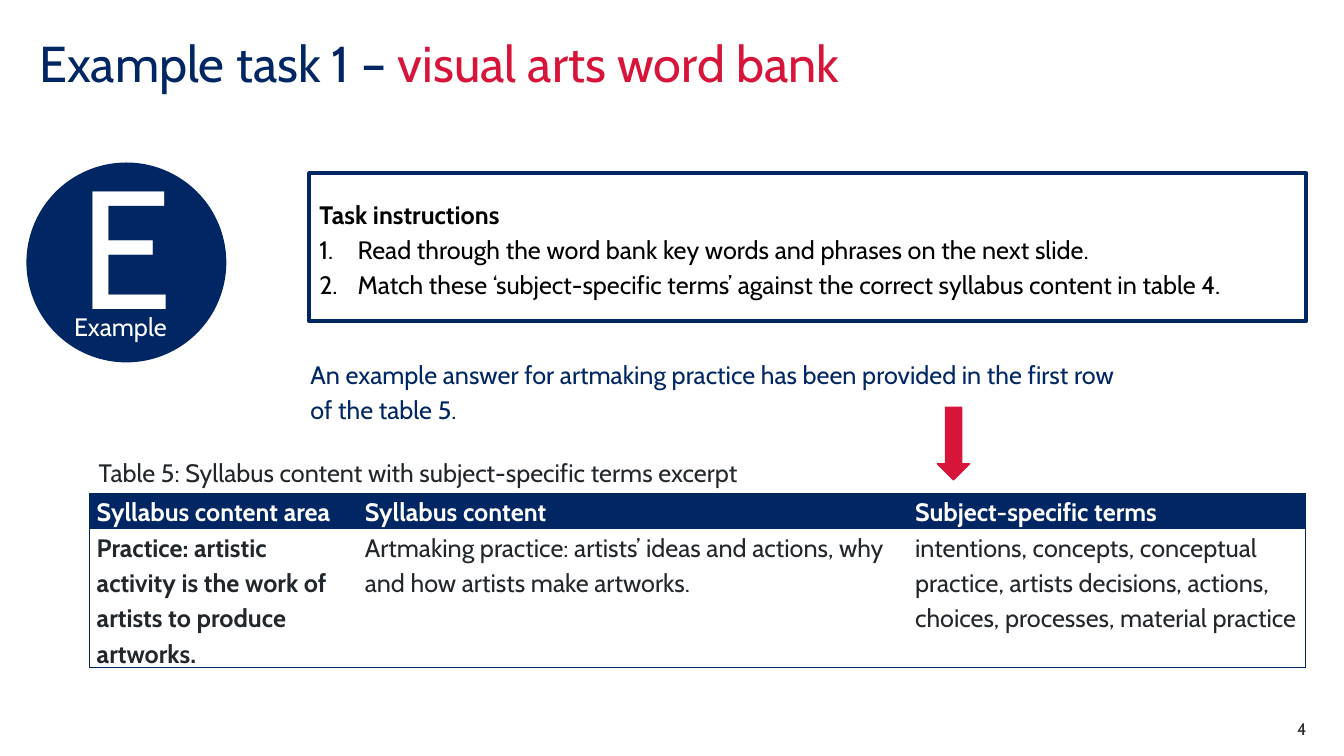
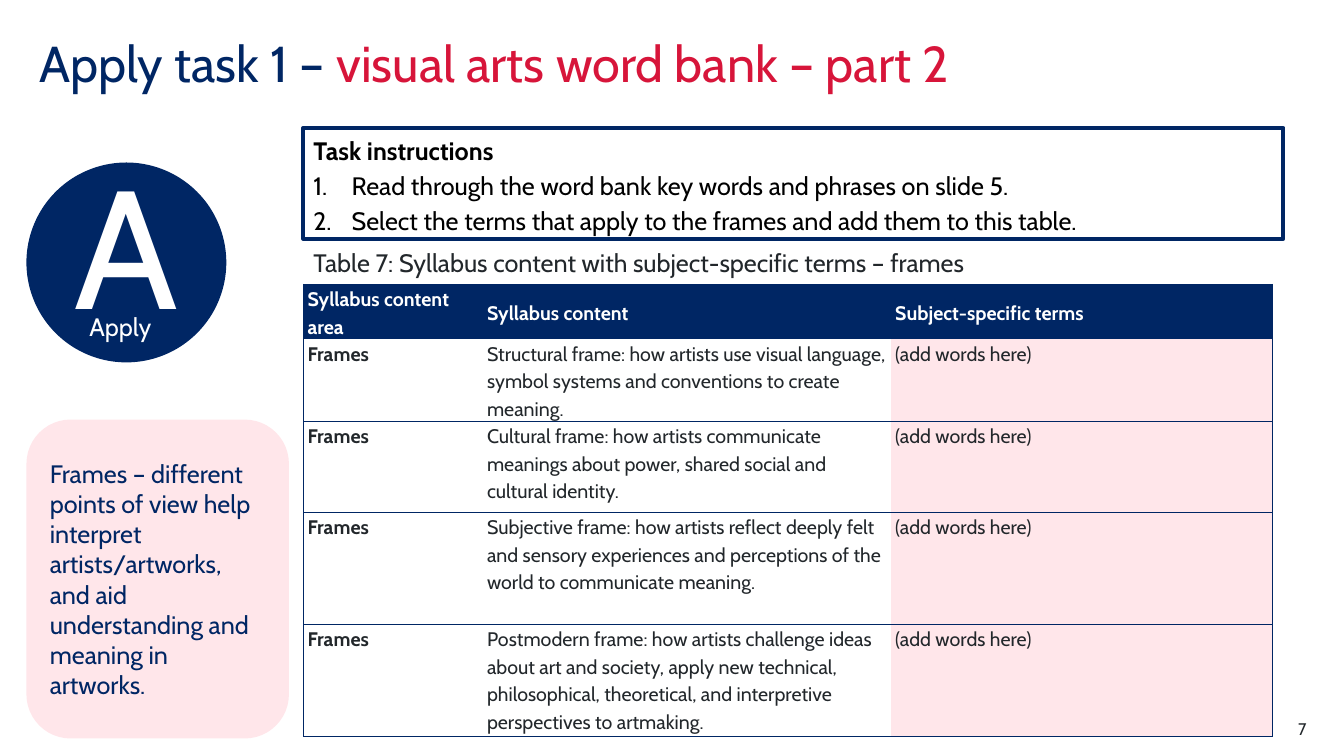
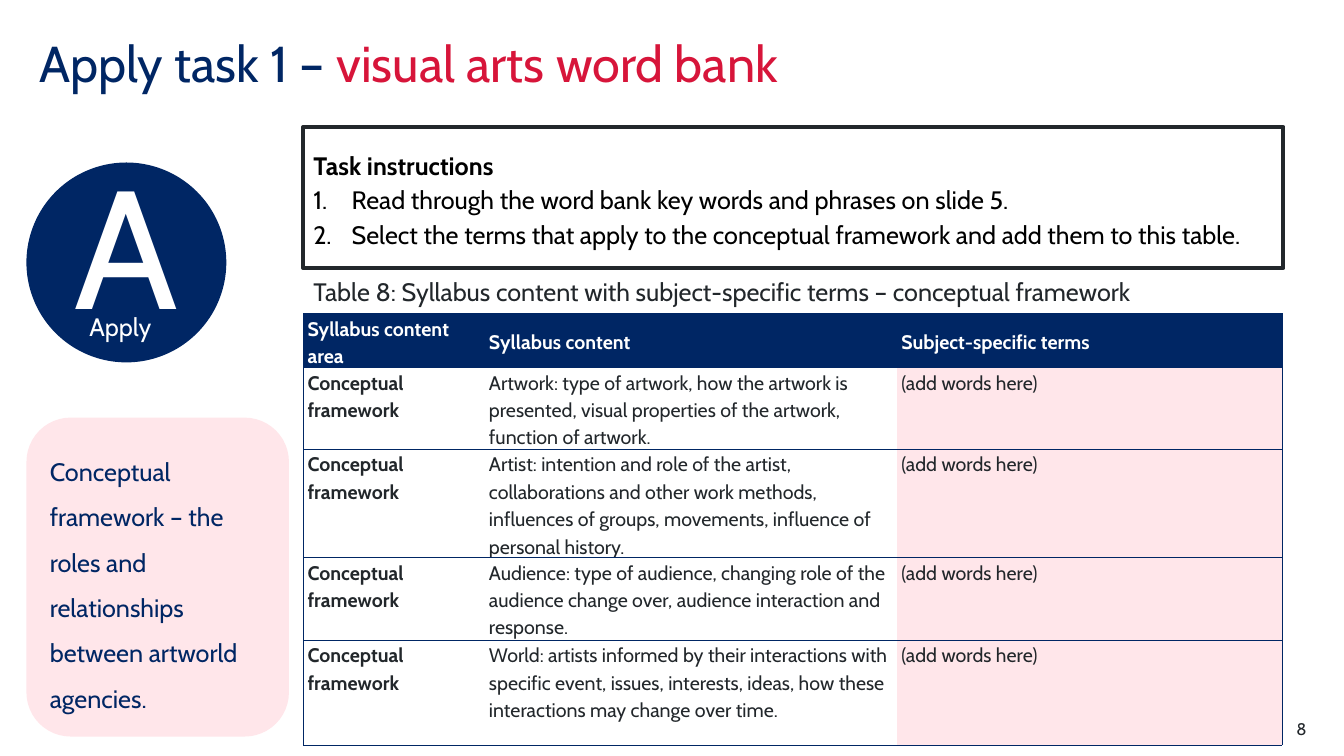
from dataclasses import dataclass
from typing import Optional

from lxml import etree
from pptx import Presentation
from pptx.dml.color import RGBColor
from pptx.enum.shapes import MSO_SHAPE as Shape
from pptx.enum.text import MSO_ANCHOR as Anchor, PP_ALIGN as Align
from pptx.oxml.ns import qn
from pptx.util import Pt


@dataclass(frozen=True)
class Theme:
    font: str = "Cabin"
    navy: str = "002664"
    red: str = "D7153A"
    pink: str = "FFE6EA"
    ink: str = "22272B"
    black: str = "000000"
    white: str = "FFFFFF"
    title: float = 36
    body: float = 18
    small: float = 14
    number: float = 12
    letter: float = 120
    leading: float = 1.15
    no_style: str = "{2D5ABB26-0587-4C30-8999-92F81FD0307C}"


T = Theme()


@dataclass(frozen=True)
class Box:
    x: float
    y: float
    w: float
    h: float

    def pts(self) -> tuple:
        return Pt(self.x), Pt(self.y), Pt(self.w), Pt(self.h)


@dataclass(frozen=True)
class Note:
    text: str
    y: float
    leading: float = 1.0


@dataclass(frozen=True)
class TermTable:
    caption: str
    caption_box: Box
    x: float
    y: float
    cols: tuple
    heights: tuple
    rows: tuple
    size: float = T.small
    margin: float = 3
    answer_fill: str = T.pink


@dataclass(frozen=True)
class Task:
    kind: str
    topic: str
    steps: tuple
    box: Box
    table: TermTable
    number: str
    outline: str = T.navy
    note: Optional[Note] = None


HEADER = ("Syllabus content area", "Syllabus content", "Subject-specific terms")
BLANK_ANSWER = "(add words here)"


def blank_rows(area: str, *contents: str) -> tuple:
    return tuple((area, content, BLANK_ANSWER) for content in contents)


TASKS = (
    Task(
        "Example", "visual arts word bank",
        ("Read through the word bank key words and phrases on the next slide.",
         "Match these ‘subject-specific terms’ against the correct syllabus content in table 4."),
        Box(221, 123.8, 712, 105.8),
        TermTable(
            "Table 5: Syllabus content with subject-specific terms excerpt",
            Box(63.4, 323.3, 549, 28.8), 64.1, 352.1,
            (191.5, 393.1, 283.7), (25.2, 99),
            (("Practice: artistic activity is the work of artists to produce artworks.",
              "Artmaking practice: artists’ ideas and actions, why and how artists make artworks.",
              "intentions, concepts, conceptual practice, artists decisions, actions, choices, "
              "processes, material practice"),),
            size=T.body, margin=5, answer_fill=T.white),
        "4"),
    Task(
        "Apply", "visual arts word bank – part 2",
        ("Read through the word bank key words and phrases on slide 5.",
         "Select the terms that apply to the frames and add them to this table."),
        Box(216.7, 91.4, 700, 79.2),
        TermTable(
            "Table 7: Syllabus content with subject-specific terms – frames",
            Box(216.7, 172.8, 700, 28.8), 216.7, 203,
            (128.2, 291.6, 272.2), (38.9, 59, 65, 80, 80),
            blank_rows(
                "Frames",
                "Structural frame: how artists use visual language, symbol systems and "
                "conventions to create meaning.",
                "Cultural frame: how artists communicate meanings about power, shared social "
                "and cultural identity.",
                "Subjective frame: how artists reflect deeply felt and sensory experiences and "
                "perceptions of the world to communicate meaning.",
                "Postmodern frame: how artists challenge ideas about art and society, apply new "
                "technical, philosophical, theoretical, and interpretive perspectives to "
                "artmaking.")),
        "7",
        note=Note("Frames – different points of view help interpret artists/artworks, and aid "
                  "understanding and meaning in artworks.", 300.2)),
    Task(
        "Apply", "visual arts word bank",
        ("Read through the word bank key words and phrases on slide 5.",
         "Select the terms that apply to the conceptual framework and add them to this table."),
        Box(216.7, 90.7, 700, 100.8),
        TermTable(
            "Table 8: Syllabus content with subject-specific terms – conceptual framework",
            Box(216.7, 193.7, 700, 28.8), 216.7, 223.9,
            (129.6, 294.5, 275), (38.5, 58.5, 77, 59, 75),
            blank_rows(
                "Conceptual framework",
                "Artwork: type of artwork, how the artwork is presented, visual properties of "
                "the artwork, function of artwork.",
                "Artist: intention and role of the artist, collaborations and other work "
                "methods, influences of groups, movements, influence of personal history.",
                "Audience: type of audience, changing role of the audience change over, "
                "audience interaction and response.",
                "World: artists informed by their interactions with specific event, issues, "
                "interests, ideas, how these interactions may change over time.")),
        "8", outline=T.ink,
        note=Note("Conceptual framework – the roles and relationships between artworld "
                  "agencies.", 298.8, 1.5)),
)


def rgb(color: str) -> RGBColor:
    return RGBColor.from_string(color)


def write(p, text: str, *, size: float = T.body, color: str = T.ink, bold: bool = False,
          align=Align.LEFT, leading: float = 1.0) -> None:
    p.alignment = align
    p.line_spacing = leading
    r = p.add_run()
    r.text = text
    r.font.name = T.font
    r.font.size = Pt(size)
    r.font.bold = bold
    r.font.color.rgb = rgb(color)


def add_text(shapes, box: Box, *, inset: bool = True, anchor=Anchor.TOP):
    tf = shapes.add_textbox(*box.pts()).text_frame
    tf.word_wrap = True
    tf.vertical_anchor = anchor
    if not inset:
        tf.margin_left = tf.margin_right = tf.margin_top = tf.margin_bottom = 0
    return tf.paragraphs[0]


def add_shape(shapes, kind, box: Box, fill: str, line: str, width: float = 1):
    sp = shapes.add_shape(kind, *box.pts())
    sp.shadow.inherit = False
    sp.fill.solid()
    sp.fill.fore_color.rgb = rgb(fill)
    sp.line.color.rgb = rgb(line)
    sp.line.width = Pt(width)
    sp.text_frame.word_wrap = True
    sp.text_frame.vertical_anchor = Anchor.MIDDLE
    return sp


def number_item(p, indent: float) -> None:
    ppr = p._p.get_or_add_pPr()
    ppr.set("marL", str(Pt(indent)))
    ppr.set("indent", str(-Pt(indent)))
    etree.SubElement(ppr, qn("a:buAutoNum"), type="arabicPeriod")


def add_badge(s, kind: str) -> None:
    shapes = s.shapes.add_group_shape().shapes
    sp = add_shape(shapes, Shape.OVAL, Box(19.4, 116.6, 141.8, 141.8), T.navy, T.navy)
    sp.text_frame.margin_bottom = Pt(32.8)
    write(sp.text_frame.paragraphs[0], kind[0], size=T.letter, color=T.white,
          align=Align.CENTER)
    write(add_text(shapes, Box(42, 222.5, 88, 34.5), inset=False), kind, color=T.white,
          align=Align.CENTER)


def add_instructions(s, task: Task) -> None:
    tf = add_shape(s.shapes, Shape.RECTANGLE, task.box, T.white, task.outline, 3).text_frame
    write(tf.paragraphs[0], "Task instructions", color=T.black, bold=True, leading=T.leading)
    for step in task.steps:
        p = tf.add_paragraph()
        number_item(p, 27.4)
        write(p, step, color=T.black, leading=T.leading)


def set_borders(cell, sides: str) -> None:
    tcpr = cell._tc.get_or_add_tcPr()
    for i, side in enumerate(sides):
        ln = etree.Element(qn(f"a:ln{side}"), w=str(Pt(0.5)))
        fill = etree.SubElement(ln, qn("a:solidFill"))
        etree.SubElement(fill, qn("a:srgbClr"), val=T.navy)
        tcpr.insert(i, ln)


def add_term_table(s, t: TermTable) -> None:
    write(add_text(s.shapes, t.caption_box, anchor=Anchor.MIDDLE), t.caption)
    rows = (HEADER, *t.rows)
    box = Box(t.x, t.y, sum(t.cols), sum(t.heights))
    frame = s.shapes.add_table(len(rows), len(t.cols), *box.pts())
    next(frame.element.iter(qn("a:tableStyleId"))).text = T.no_style
    table = frame.table
    table.horz_banding = False
    for col, width in zip(table.columns, t.cols):
        col.width = Pt(width)
    for row, height in zip(table.rows, t.heights):
        row.height = Pt(height)
    body_fills = (T.white, T.white, t.answer_fill)
    for i, texts in enumerate(rows):
        head = i == 0
        for j, text in enumerate(texts):
            cell = table.cell(i, j)
            cell.margin_left = cell.margin_right = Pt(t.margin)
            cell.margin_top = cell.margin_bottom = 0
            cell.vertical_anchor = Anchor.MIDDLE if head else Anchor.TOP
            cell.fill.solid()
            cell.fill.fore_color.rgb = rgb(T.navy if head else body_fills[j])
            set_borders(cell, ("LTB", "TB", "RTB")[j])
            write(cell.text_frame.paragraphs[0], text, size=t.size,
                  color=T.white if head else T.ink, bold=head or j == 0, leading=T.leading)


def add_task(prs, task: Task):
    s = prs.slides.add_slide(prs.slide_layouts[6])
    p = add_text(s.shapes, Box(28, 28, 794, 79), inset=False)
    write(p, f"{task.kind} task 1 – ", size=T.title, color=T.navy, leading=0.9)
    write(p, task.topic, size=T.title, color=T.red, leading=0.9)
    add_badge(s, task.kind)
    if task.note:
        sp = add_shape(s.shapes, Shape.ROUNDED_RECTANGLE, Box(19.4, task.note.y, 186.5, 226.8),
                       T.pink, T.pink)
        write(sp.text_frame.paragraphs[0], task.note.text, color=T.navy,
              leading=task.note.leading)
    add_instructions(s, task)
    add_term_table(s, task.table)
    write(add_text(s.shapes, Box(876.2, 513.4, 57, 14.4), inset=False), task.number,
          size=T.number, align=Align.RIGHT)
    return s


def add_example_pointer(s) -> None:
    write(add_text(s.shapes, Box(214.6, 249.8, 591.8, 55.4)),
          "An example answer for artmaking practice has been provided in the first row of "
          "the table 5.", color=T.navy, leading=T.leading)
    add_shape(s.shapes, Shape.DOWN_ARROW, Box(669.6, 291, 23, 51.8), T.red, T.red)


def main() -> None:
    prs = Presentation()
    prs.slide_width, prs.slide_height = Pt(960), Pt(540)
    slides = [add_task(prs, task) for task in TASKS]
    add_example_pointer(slides[0])
    prs.save("out.pptx")


if __name__ == "__main__":
    main()
